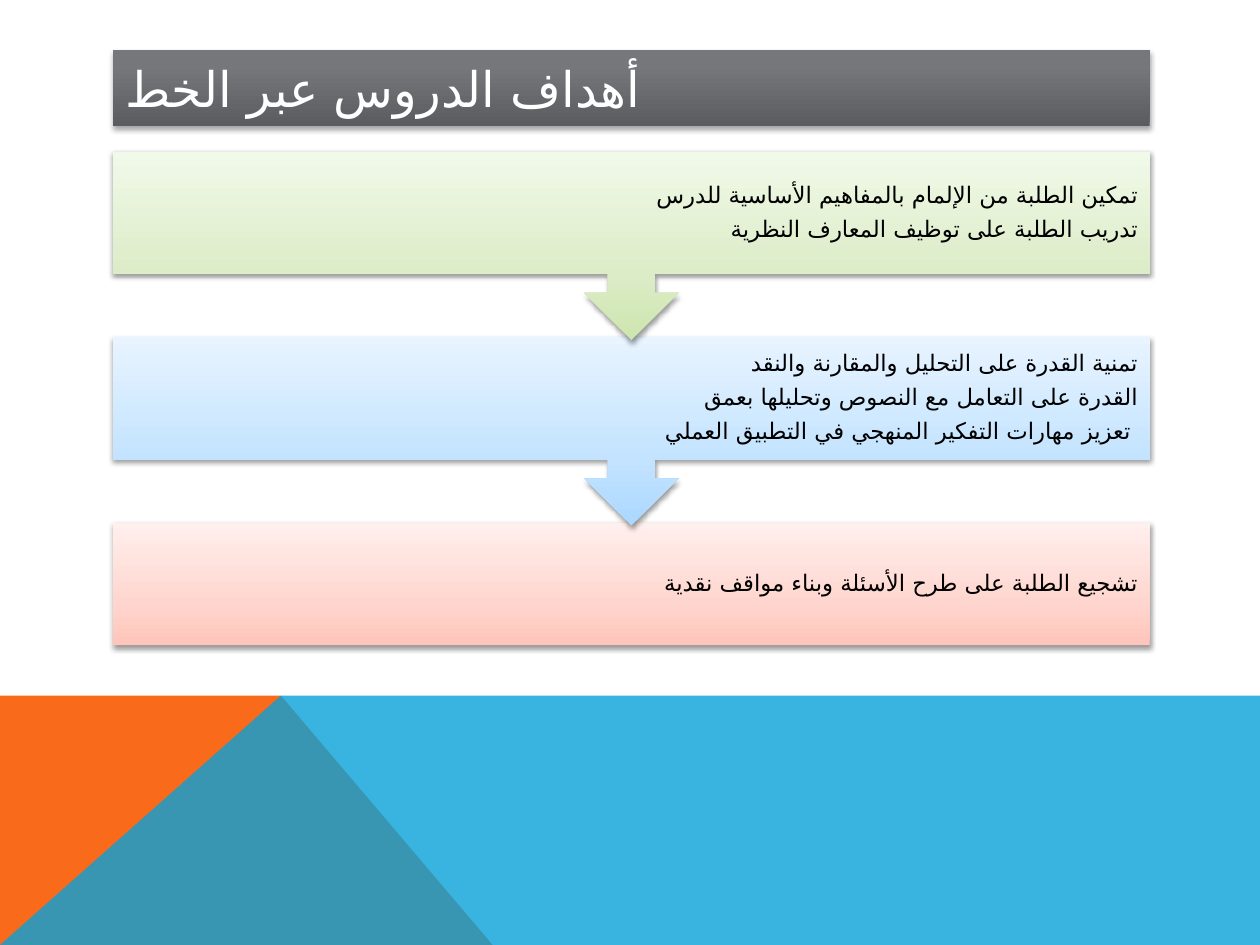
import copy

import pptx
import pptx.dml.color
import pptx.enum.shapes
import pptx.enum.text
import pptx.oxml
import pptx.oxml.ns
import pptx.util
from pptx.util import Pt

FONT = "Cabin"
ARABIC_FONT = "DejaVu Sans"
COLORS = {"white": "FFFFFF", "black": "000000", "orange": "F96A1B", "blue": "08A1D9"}
GRADIENTS = {
    "title": [(0, "5A5C5F"), (0.8, "75777B"), (1, "75787C")],
    "green": [(0, "CDE6AF"), (0.35, "DCECC7"), (1, "F1F9E9")],
    "blue": [(0, "ABD8FF"), (0.35, "C3E3FF"), (1, "E8F4FF")],
    "red": [(0, "FFC5BA"), (0.35, "FFD6CF"), (1, "FFEFED")],
}
TITLE = "أهداف الدروس عبر الخط"
STEPS = [
    ("green", ["تمكين الطلبة من الإلمام بالمفاهيم الأساسية للدرس",
               "تدريب الطلبة على توظيف المعارف النظرية"]),
    ("blue", ["تمنية القدرة على التحليل والمقارنة والنقد",
              "القدرة على التعامل مع النصوص وتحليلها بعمق",
              " تعزيز مهارات التفكير المنهجي في التطبيق العملي"]),
    ("red", ["تشجيع الطلبة على طرح الأسئلة وبناء مواقف نقدية"]),
]


def rgb(value):
    """Turn a hex string into a colour."""
    return pptx.dml.color.RGBColor.from_string(value)


def add_xml(parent, tag, **attributes):
    """Append a drawing element with the given attributes."""
    element = pptx.oxml.parse_xml(f"<a:{tag} {pptx.oxml.ns.nsdecls('a')}/>")
    for name, value in attributes.items():
        element.set(name, str(value))
    parent.append(element)
    return element


def set_gradient(shape, stops):
    """Fill a shape with a gradient that runs from bottom to top."""
    shape.fill.gradient()
    shape.fill.gradient_angle = 90
    first = shape.fill.gradient_stops[0]._gs
    while len(shape.fill.gradient_stops) < len(stops):
        first.getparent().append(copy.deepcopy(first))
    for stop, (position, color) in zip(shape.fill.gradient_stops, stops):
        stop.position = position
        stop.color.rgb = rgb(color)


def set_shadow(shape, distance, alpha):
    """Give a shape a soft shadow that falls downwards."""
    shape.shadow.inherit = False
    effects = shape._element.spPr.find(pptx.oxml.ns.qn("a:effectLst"))
    shadow = add_xml(effects, "outerShdw", blurRad=Pt(3.1), dist=Pt(distance),
                     dir=5400000, rotWithShape=0)
    color = add_xml(shadow, "srgbClr", val=COLORS["black"])
    add_xml(color, "alpha", val=alpha * 1000)


def set_text(shape, lines, size, color, align, inset=(7.2, 7.2), rtl=False,
             line_spacing=1.0, space_after=0):
    """Write formatted paragraphs into a shape."""
    frame = shape.text_frame
    frame.word_wrap = True
    frame.vertical_anchor = pptx.enum.text.MSO_ANCHOR.MIDDLE
    frame.margin_left = frame.margin_right = Pt(inset[0])
    frame.margin_top = frame.margin_bottom = Pt(inset[1])
    for index, line in enumerate(lines):
        paragraph = frame.paragraphs[0] if index == 0 else frame.add_paragraph()
        paragraph.alignment = align
        paragraph.line_spacing = line_spacing
        paragraph.space_after = Pt(space_after)
        paragraph._p.get_or_add_pPr().set("rtl", str(int(rtl)))
        run = paragraph.add_run()
        run.text = line
        run.font.size = Pt(size)
        run.font.name = FONT
        run.font.color.rgb = rgb(color)
        add_xml(run._r.get_or_add_rPr(), "cs", typeface=ARABIC_FONT)


def add_panel(slide, kind, box, stops, distance, alpha):
    """Add a gradient panel with a shadow and no outline."""
    shape = slide.shapes.add_shape(kind, *map(Pt, box))
    set_gradient(shape, stops)
    shape.line.fill.background()
    set_shadow(shape, distance, alpha)
    return shape


def add_polygon(slide, points, color):
    """Add a filled outline through the given points."""
    corners = [(Pt(x), Pt(y)) for x, y in points]
    builder = slide.shapes.build_freeform(*corners[0], scale=1.0)
    builder.add_line_segments(corners[1:], close=True)
    shape = builder.convert_to_shape()
    shape.fill.solid()
    shape.fill.fore_color.rgb = rgb(color)
    shape.line.fill.background()
    shape.shadow.inherit = False
    return shape


def add_footer(slide, left, top, width, height):
    """Draw the orange and translucent blue band."""
    right, bottom = left + width, top + height
    peak = (left + 0.223 * width, top)
    add_polygon(slide, [(left, bottom), (left, top), peak,
                        (left + 0.391 * width, bottom)], COLORS["orange"])
    blue = add_polygon(slide, [(left, bottom), peak, (right, top),
                               (right, bottom)], COLORS["blue"])
    color = blue._element.spPr.find(".//" + pptx.oxml.ns.qn("a:srgbClr"))
    add_xml(color, "alpha", val=80000)


def add_title(slide, left, top, width, height):
    """Add the dark title bar."""
    bar = add_panel(slide, pptx.enum.shapes.MSO_SHAPE.RECTANGLE,
                    (left, top, width, height), GRADIENTS["title"], 1.8, 35)
    set_text(bar, [TITLE], 28, COLORS["white"], pptx.enum.text.PP_ALIGN.LEFT,
             inset=(7.2, 3.6))


def add_steps(slide, left, top, width, height):
    """Stack the goals, each pointing down to the next."""
    shapes = pptx.enum.shapes.MSO_SHAPE
    body = 70
    pitch = (height - body) / (len(STEPS) - 1)
    callout = body / 0.65
    for index, (color, lines) in reversed(list(enumerate(STEPS))):
        last = index == len(STEPS) - 1
        kind = shapes.RECTANGLE if last else shapes.DOWN_ARROW_CALLOUT
        box = (left, top + index * pitch, width, body if last else callout)
        panel = add_panel(slide, kind, box, GRADIENTS[color], 1.6, 38)
        set_text(panel, lines, 13, COLORS["black"],
                 pptx.enum.text.PP_ALIGN.JUSTIFY, rtl=True,
                 line_spacing=0.9, space_after=5.25)


def main():
    """Build and save the slide."""
    presentation = pptx.Presentation()
    presentation.slide_width, presentation.slide_height = Pt(720), Pt(540)
    slide = presentation.slides.add_slide(presentation.slide_layouts[6])
    add_footer(slide, 0, 397.5, 720, 142.5)
    add_title(slide, 64.6, 28.6, 592.4, 43.4)
    add_steps(slide, 64.6, 86.6, 592.4, 282)
    presentation.save("out.pptx")


if __name__ == "__main__":
    main()
